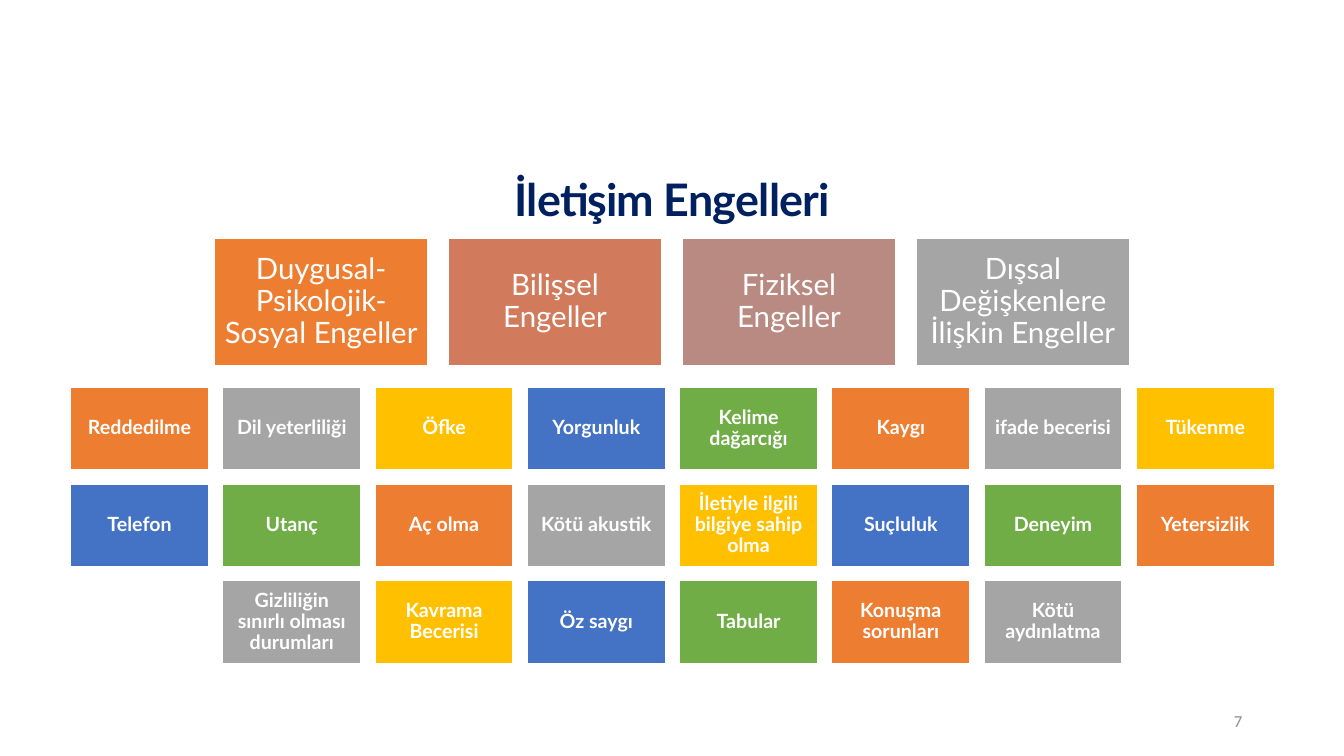
from pptx import Presentation
from pptx.dml.color import RGBColor
from pptx.enum.shapes import MSO_SHAPE
from pptx.enum.text import MSO_ANCHOR, PP_ALIGN
from pptx.util import Inches, Pt

ORANGE, GRAY, YELLOW, BLUE, GREEN = "ED7D31", "A5A5A5", "FFC000", "4472C4", "70AD47"
WHITE, NAVY, NUMBER_GRAY = "FFFFFF", "002060", "8C8C8C"


def rgb(value):
    return RGBColor.from_string(value)


class SlideBuilder:
    """Holds the text style and the current slide."""

    font = "Lato"
    line_spacing = 0.9

    def __init__(self, slide):
        self.slide = slide

    def add_text(self, sp, text, size, color, margin=None, align=PP_ALIGN.CENTER,
                 spacing=None, **font):
        tf = sp.text_frame
        frame = {"word_wrap": True, "vertical_anchor": MSO_ANCHOR.MIDDLE}
        if margin is not None:
            sides = ("left", "top", "right", "bottom")
            frame.update({f"margin_{side}": Inches(margin) for side in sides})
        for name, value in frame.items():
            setattr(tf, name, value)
        p = tf.paragraphs[0]
        p.alignment = align
        p.line_spacing = spacing or self.line_spacing
        r = p.add_run()
        r.text = text
        for name, value in {"name": self.font, "size": Pt(size), **font}.items():
            setattr(r.font, name, value)
        r.font.color.rgb = rgb(color)
        return r

    def title(self, text, box):
        sp = self.slide.shapes.title
        sp.left, sp.top, sp.width, sp.height = map(Inches, box)
        r = self.add_text(sp, text, 32, NAVY, bold=True)
        r.font._element.set("spc", "-50")

    def tile(self, text, box, fill, size, margin, bold=False):
        sp = self.slide.shapes.add_shape(MSO_SHAPE.RECTANGLE, *map(Inches, box))
        sp.shadow.inherit = False
        sp.fill.solid()
        sp.fill.fore_color.rgb = rgb(fill)
        sp.line.color.rgb = rgb(WHITE)
        sp.line.width = Pt(1)
        self.add_text(sp, text, size, WHITE, margin, bold=bold)

    def page_number(self, text, box):
        sp = self.slide.shapes.add_textbox(*map(Inches, box))
        self.add_text(sp, text, 12, NUMBER_GRAY, align=PP_ALIGN.RIGHT,
                      spacing=1.0, name="Calibri")


def main():
    prs = Presentation()
    prs.slide_width, prs.slide_height = Inches(13.33), Inches(7.5)
    s = SlideBuilder(prs.slides.add_slide(prs.slide_layouts[5]))

    s.title("İletişim Engelleri", (0.92, 1.28, 11.5, 1.45))

    # Barrier categories
    categories = [
        ("Duygusal-Psikolojik-Sosyal Engeller", ORANGE),
        ("Bilişsel Engeller", "D17B5C"),
        ("Fiziksel Engeller", "B98A82"),
        ("Dışsal Değişkenlere İlişkin Engeller", GRAY),
    ]
    for i, (text, fill) in enumerate(categories):
        s.tile(text, (2.13 + 2.32 * i, 2.36, 2.11, 1.27), fill, 21, 0.09)

    # Example barriers: centred rows, colours running on from row to row
    rows = [
        ["Reddedilme", "Dil yeterliliği", "Öfke", "Yorgunluk",
         "Kelime dağarcığı", "Kaygı", "ifade becerisi", "Tükenme"],
        ["Telefon", "Utanç", "Aç olma", "Kötü akustik",
         "İletiyle ilgili bilgiye sahip olma", "Suçluluk", "Deneyim", "Yetersizlik"],
        ["Gizliliğin sınırlı olması durumları", "Kavrama Becerisi", "Öz saygı",
         "Tabular", "Konuşma sorunları", "Kötü aydınlatma"],
    ]
    palette = [ORANGE, GRAY, YELLOW, BLUE, GREEN]
    columns = len(rows[0])
    for i, row in enumerate(rows):
        indent = (columns - len(row)) / 2
        for j, text in enumerate(row):
            box = (0.7 + 1.51 * (indent + j), 3.84 + 0.96 * i, 1.37, 0.82)
            fill = palette[(i * columns + j) % len(palette)]
            s.tile(text, box, fill, 14, 0.06, bold=True)

    # Page number
    s.page_number("7", (9.42, 6.95, 3, 0.4))

    prs.save("out.pptx")


if __name__ == "__main__":
    main()
